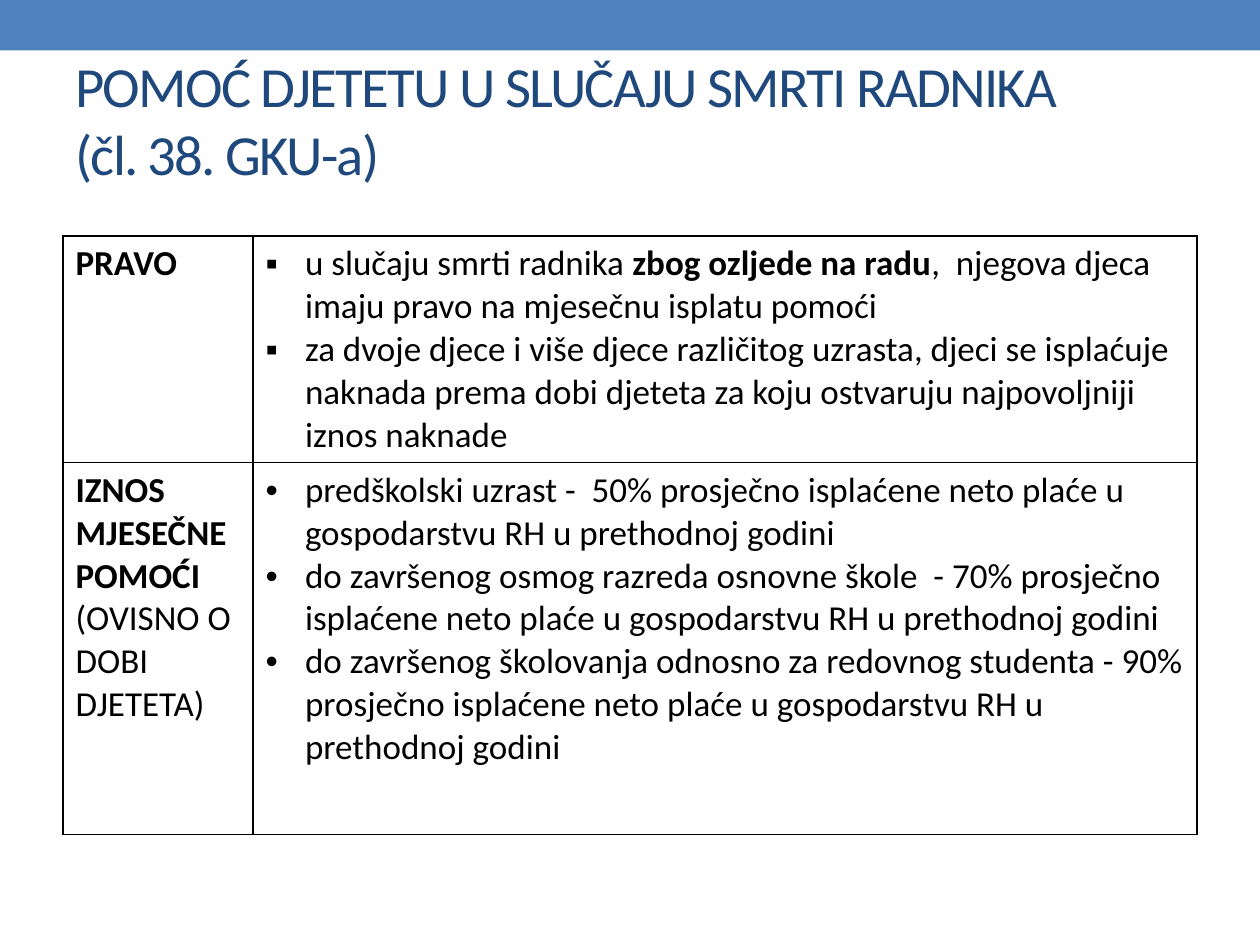
from dataclasses import dataclass

from lxml import etree
from pptx import Presentation
from pptx.dml.color import RGBColor
from pptx.enum.shapes import MSO_SHAPE
from pptx.enum.text import MSO_ANCHOR
from pptx.oxml.ns import qn
from pptx.util import Pt

RECT = MSO_SHAPE.RECTANGLE
TOP = MSO_ANCHOR.TOP

BLUE = RGBColor(0x4F, 0x81, 0xBD)
NAVY = RGBColor(0x1F, 0x49, 0x7D)
BLACK = RGBColor(0, 0, 0)

FONT = "Calibri"
TITLE_SIZE, BODY_SIZE = 32.4, 20
BULLET_INDENT = Pt(22.5)
BORDER_WIDTH = Pt(1)
COL_WIDTHS = (108.6, 539.4)
ROW_HEIGHTS = (129.6, 212.4)


@dataclass(frozen=True)
class Span:
    text: str
    bold: bool = False


@dataclass(frozen=True)
class Cell:
    paragraphs: tuple[tuple[Span, ...], ...]
    bullet: str = ""


TITLE_LINES = ("POMOĆ DJETETU U SLUČAJU SMRTI RADNIKA", "(čl. 38. GKU-a)")

ROWS = (
    (
        Cell(((Span("PRAVO", True),),)),
        Cell((
            (Span("u slučaju smrti radnika "),
             Span("zbog ozljede na radu", True),
             Span(",  njegova djeca imaju pravo na mjesečnu isplatu pomoći")),
            (Span("za dvoje djece i više djece različitog uzrasta, djeci se "
                  "isplaćuje naknada prema dobi djeteta za koju ostvaruju "
                  "najpovoljniji iznos naknade"),),
        ), "▪"),
    ),
    (
        Cell(((Span("IZNOS MJESEČNE POMOĆI ", True),
               Span("(OVISNO O DOBI DJETETA)")),)),
        Cell((
            (Span("predškolski uzrast -  50% prosječno isplaćene neto plaće u "
                  "gospodarstvu RH u prethodnoj godini"),),
            (Span("do završenog osmog razreda osnovne škole  - 70% prosječno "
                  "isplaćene neto plaće u gospodarstvu RH u prethodnoj godini"),),
            (Span("do završenog školovanja odnosno za redovnog studenta - 90% "
                  "prosječno isplaćene neto plaće u gospodarstvu RH u "
                  "prethodnoj godini"),),
        ), "•"),
    ),
)


def add_run(p, span: Span, size: float, color: RGBColor):
    r = p.add_run()
    r.text = span.text
    font = r.font
    font.name, font.size, font.bold = FONT, Pt(size), span.bold
    font.color.rgb = color
    return r


def set_bullet(p, char: str) -> None:
    """Give the paragraph a hanging indent and a bullet character."""
    pPr = p._p.get_or_add_pPr()
    pPr.set("marL", str(BULLET_INDENT))
    pPr.set("indent", str(-BULLET_INDENT))
    etree.SubElement(pPr, qn("a:buFont")).set("typeface", "Arial")
    etree.SubElement(pPr, qn("a:buChar")).set("char", char)


def set_borders(cell) -> None:
    """Draw all four sides of a table cell, ahead of its fill in the XML."""
    tcPr = cell._tc.get_or_add_tcPr()
    for i, side in enumerate(("lnL", "lnR", "lnT", "lnB")):
        ln = etree.Element(qn(f"a:{side}"), w=str(BORDER_WIDTH))
        fill = etree.SubElement(ln, qn("a:solidFill"))
        etree.SubElement(fill, qn("a:srgbClr")).set("val", str(BLACK))
        tcPr.insert(i, ln)


def fill_cell(cell, content: Cell) -> None:
    cell.fill.background()
    set_borders(cell)
    tf = cell.text_frame
    for i, spans in enumerate(content.paragraphs):
        p = tf.add_paragraph() if i else tf.paragraphs[0]
        if content.bullet:
            set_bullet(p, content.bullet)
        for span in spans:
            add_run(p, span, BODY_SIZE, BLACK)


def add_band(slide) -> None:
    sp = slide.shapes.add_shape(RECT, 0, 0, Pt(720), Pt(28.8))
    sp.shadow.inherit = False
    sp.fill.solid()
    sp.fill.fore_color.rgb = BLUE
    sp.line.fill.background()


def add_title(slide) -> None:
    sp = slide.shapes.add_textbox(Pt(36), Pt(21.6), Pt(648), Pt(90))
    tf = sp.text_frame
    tf.word_wrap = True
    tf.vertical_anchor = TOP
    tf.margin_top = Pt(7.5)
    p = tf.paragraphs[0]
    for i, line in enumerate(TITLE_LINES):
        if i:
            p.add_line_break()
        r = add_run(p, Span(line), TITLE_SIZE, NAVY)
        r.font._element.set("spc", "-100")


def add_rights_table(slide) -> None:
    table = slide.shapes.add_table(
        len(ROWS), len(COL_WIDTHS), Pt(36), Pt(134.8),
        Pt(sum(COL_WIDTHS)), Pt(sum(ROW_HEIGHTS))).table
    table.first_row = table.horz_banding = False
    for column, width in zip(table.columns, COL_WIDTHS):
        column.width = Pt(width)
    for row, height, contents in zip(table.rows, ROW_HEIGHTS, ROWS):
        row.height = Pt(height)
        for cell, content in zip(row.cells, contents):
            fill_cell(cell, content)


def main() -> None:
    prs = Presentation()
    prs.slide_width, prs.slide_height = Pt(720), Pt(540)
    slide = prs.slides.add_slide(prs.slide_layouts[6])
    add_band(slide)
    add_title(slide)
    add_rights_table(slide)
    prs.save("out.pptx")


if __name__ == "__main__":
    main()
